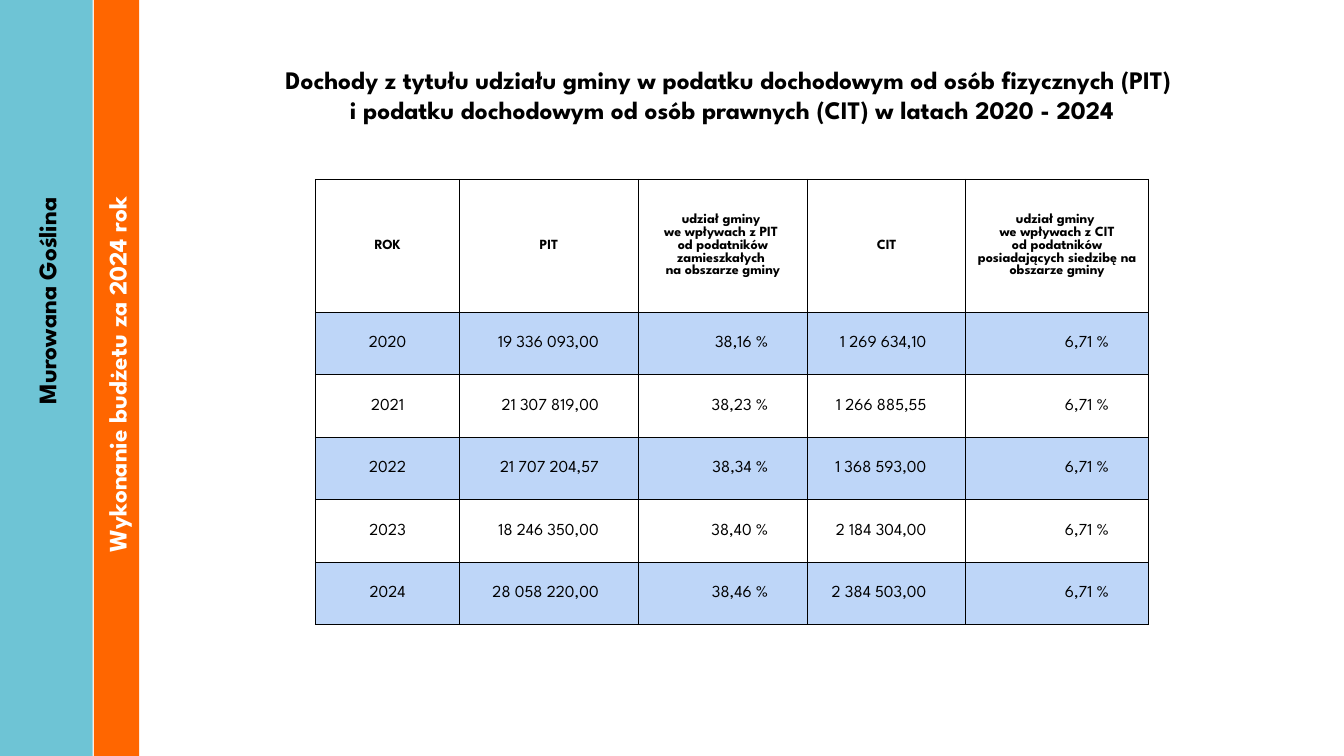
from pptx import Presentation
from pptx.dml.color import RGBColor
from pptx.enum.shapes import MSO_SHAPE as Shape
from pptx.enum.text import MSO_ANCHOR as Anchor, MSO_AUTO_SIZE as Fit, PP_ALIGN as Align
from pptx.oxml.ns import qn
from pptx.util import Inches, Pt
from lxml.etree import SubElement as Sub

FONT = "League Spartan"
BLACK = RGBColor(0, 0, 0)
WHITE = RGBColor(255, 255, 255)
TEAL = RGBColor(0x6E, 0xC4, 0xD5)
ORANGE = RGBColor(0xFF, 0x66, 0x00)
BLUE = RGBColor(0xBE, 0xD6, 0xF8)

TITLE = ("Dochody z tytułu udziału gminy w podatku dochodowym od osób fizycznych (PIT) \n"
         "i podatku dochodowym od osób prawnych (CIT) w latach 2020 - 2024")
COLS = [1.43, 1.77, 1.68, 1.57, 1.81]
HEAD = [
    "ROK",
    "PIT",
    "udział gminy \nwe wpływach z PIT \nod podatników zamieszkałych \nna obszarze gminy",
    "CIT",
    "udział gminy \nwe wpływach z CIT\nod podatników posiadających siedzibę na obszarze gminy",
]
DATA = [
    ["2020", "19 336 093,00", "38,16 %", "1 269 634,10", "6,71 %"],
    ["2021", "21 307 819,00", "38,23 %", "1 266 885,55", "6,71 %"],
    ["2022", "21 707 204,57", "38,34 %", "1 368 593,00", "6,71 %"],
    ["2023", "18 246 350,00", "38,40 %", "2 184 304,00", "6,71 %"],
    ["2024", "28 058 220,00", "38,46 %", "2 384 503,00", "6,71 %"],
]


def write(frame, text, size, color, bold, align):
    para = frame.paragraphs[0]
    para.text = text
    para.alignment = align
    font = para.font
    font.name, font.size, font.bold = FONT, Pt(size), bold
    font.color.rgb = color


def band(slide, box, fill, text, ink, span, mid):
    x, y, w, h = box
    bar = slide.shapes.add_shape(Shape.RECTANGLE, *map(Inches, box))
    bar.shadow.inherit = False
    bar.fill.solid()
    bar.fill.fore_color.rgb = fill
    bar.line.fill.background()
    tall = 0.4
    label = slide.shapes.add_textbox(
        Inches(x + (w - span) / 2), Inches(y + mid - tall / 2), Inches(span), Inches(tall))
    label.rotation = 270
    frame = label.text_frame
    frame.word_wrap = True
    frame.vertical_anchor = Anchor.MIDDLE
    write(frame, text, 18, ink, True, Align.LEFT)


def title(slide, box):
    head = slide.shapes.title
    head.left, head.top, head.width, head.height = map(Inches, box)
    frame = head.text_frame
    frame.word_wrap = True
    frame.auto_size = Fit.NONE
    frame.vertical_anchor = Anchor.TOP
    write(frame, TITLE, 18, BLACK, True, Align.CENTER)


def border(cell):
    props = cell._tc.get_or_add_tcPr()
    for side in ("lnL", "lnR", "lnT", "lnB"):
        line = Sub(props, qn("a:" + side), w=str(Pt(1)))
        Sub(Sub(line, qn("a:solidFill")), qn("a:srgbClr"), val=str(BLACK))


def grid(slide, box):
    rows = [HEAD] + DATA
    table = slide.shapes.add_table(len(rows), len(COLS), *map(Inches, box)).table
    table.first_row = table.horz_banding = False
    for col, width in zip(table.columns, COLS):
        col.width = Inches(width)
    step = 0.62
    for r, row in enumerate(rows):
        top = r == 0
        table.rows[r].height = Inches(box[3] - step * len(DATA) if top else step)
        for c, text in enumerate(row):
            cell = table.cell(r, c)
            border(cell)
            if r % 2:
                cell.fill.solid()
                cell.fill.fore_color.rgb = BLUE
            else:
                cell.fill.background()
            cell.vertical_anchor = Anchor.MIDDLE
            mid = top or c == 0
            cell.margin_right = Inches(0.1 if mid else 0.39)
            write(cell.text_frame, text, 10 if top else 12, BLACK, top,
                  Align.CENTER if mid else Align.RIGHT)


def main():
    deck = Presentation()
    deck.slide_width, deck.slide_height = Inches(13.33), Inches(7.5)
    slide = deck.slides.add_slide(deck.slide_layouts[5])
    band(slide, (0, 0, 0.92, 7.5), TEAL, "Murowana Goślina", BLACK, 2.52, 2.85)
    band(slide, (0.93, 0, 0.45, 7.5), ORANGE, "Wykonanie budżetu za 2024 rok", WHITE, 5.41, 2.87)
    title(slide, (1.83, 0.59, 10.86, 0.71))
    grid(slide, (3.13, 1.78, sum(COLS), 4.42))
    deck.save("out.pptx")


if __name__ == "__main__":
    main()
